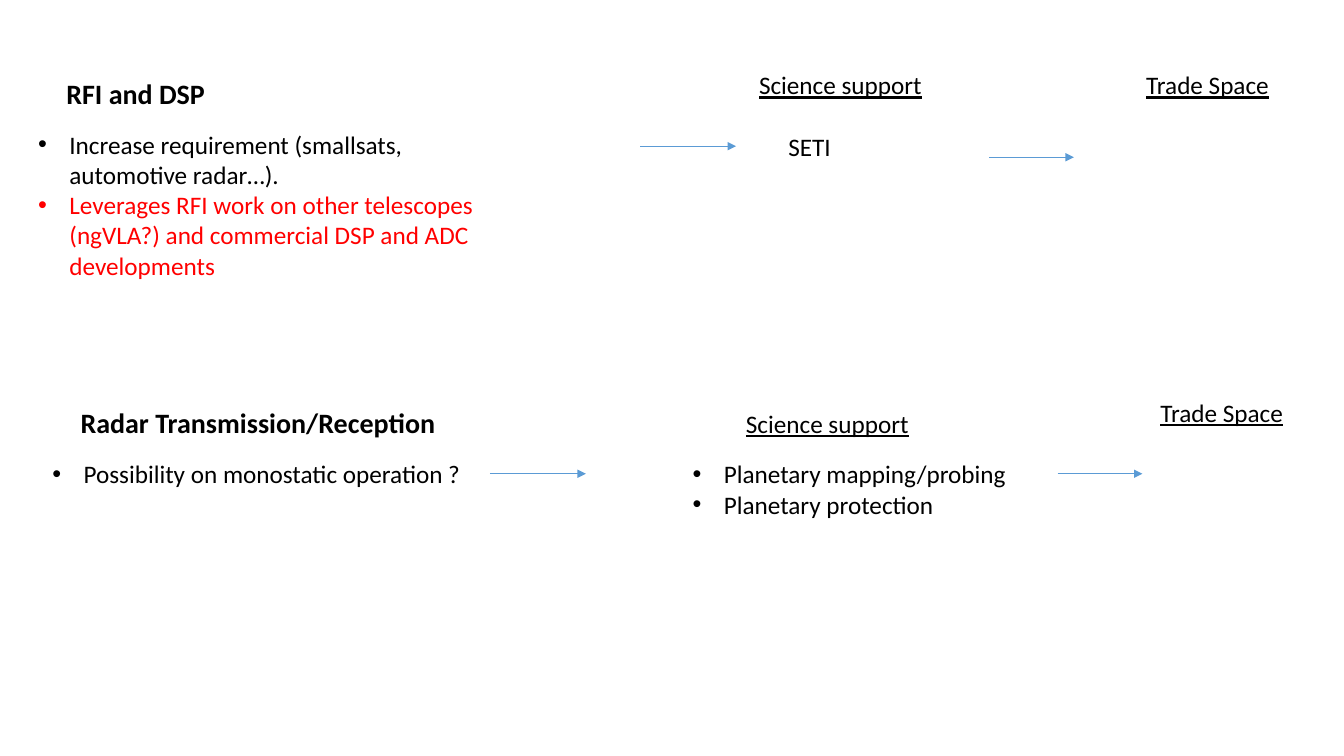
import pptx
import pptx.dml.color
import pptx.enum.shapes
import pptx.enum.text
import pptx.oxml.ns
import pptx.util
from lxml import etree
from pptx.util import Inches

FONT = "Calibri"
BLACK = "000000"
RED = "FF0000"
ARROW_BLUE = "5B9BD5"
BULLET_INDENT = Inches(0.31)


def colour(value):
    return pptx.dml.color.RGBColor.from_string(value)


def add_xml(parent, tag, **attributes):
    """Append a DrawingML element to its parent."""
    return etree.SubElement(parent, pptx.oxml.ns.qn(tag), **attributes)


def add_box(page, left, top, width, height, wrap):
    box = page.shapes.add_textbox(
        Inches(left), Inches(top), Inches(width), Inches(height))
    frame = box.text_frame
    frame.word_wrap = wrap
    frame.auto_size = pptx.enum.text.MSO_AUTO_SIZE.SHAPE_TO_FIT_TEXT
    return frame


def add_span(para, text, size=18, fill=BLACK, bold=None, underline=None):
    span = para.add_run()
    span.text = text
    span.font.name = FONT
    span.font.size = pptx.util.Pt(size)
    span.font.bold = bold
    span.font.underline = underline
    span.font.color.rgb = colour(fill)


def add_label(page, left, top, width, text, height=0.4, wrap=False, **style):
    """Add a single line of text, such as a heading."""
    frame = add_box(page, left, top, width, height, wrap)
    add_span(frame.paragraphs[0], text, **style)


def add_bullets(page, left, top, width, height, items, wrap=True):
    """Add a bulleted list of (text, colour) items."""
    frame = add_box(page, left, top, width, height, wrap)
    for index, (text, fill) in enumerate(items):
        para = frame.add_paragraph() if index else frame.paragraphs[0]
        properties = para._p.get_or_add_pPr()
        properties.set("marL", str(BULLET_INDENT))
        properties.set("indent", str(-BULLET_INDENT))
        add_xml(properties, "a:buFont", typeface="Arial")
        add_xml(properties, "a:buChar", char="•")
        add_span(para, text, fill=fill)


def add_arrow(page, left, top, length):
    """Add a thin horizontal arrow pointing right."""
    arrow = page.shapes.add_connector(
        pptx.enum.shapes.MSO_CONNECTOR.STRAIGHT,
        Inches(left), Inches(top), Inches(left + length), Inches(top))
    arrow.line.color.rgb = colour(ARROW_BLUE)
    arrow.line.width = pptx.util.Pt(0.5)
    add_xml(arrow.line._get_or_add_ln(), "a:tailEnd", type="triangle")
    add_xml(arrow._element.spPr, "a:effectLst")


def main():
    deck = pptx.Presentation()
    deck.slide_width = Inches(13.33)
    deck.slide_height = Inches(7.5)
    page = deck.slides.add_slide(deck.slide_layouts[6])

    # Topic headings
    add_label(page, 0.56, 0.71, 1.59, "RFI and DSP",
              height=0.44, size=20, bold=True)
    add_label(page, 0.7, 3.97, 3.75, "Radar Transmission/Reception",
              height=0.44, size=20, bold=True)

    # Column headings
    for left, top in ((7.43, 0.64), (7.3, 4)):
        add_label(page, left, top, 1.84, "Science support", underline=True)
    for left, top in ((11.27, 0.64), (11.41, 3.89)):
        add_label(page, left, top, 1.9, "Trade Space",
                  wrap=True, underline=True)

    # RFI and DSP content
    add_bullets(page, 0.28, 1.23, 4.92, 1.62, [
        ("Increase requirement (smallsats, automotive radar…).", BLACK),
        ("Leverages RFI work on other telescopes (ngVLA?) and commercial "
         "DSP and ADC developments", RED),
    ])
    add_label(page, 7.72, 1.25, 0.63, "SETI")

    # Radar content
    add_bullets(page, 0.42, 4.5, 4.92, 0.4,
                [("Possibility on monostatic operation ?", BLACK)])
    add_bullets(page, 6.77, 4.5, 3.35, 0.71, [
        ("Planetary mapping/probing", BLACK),
        ("Planetary protection", BLACK),
    ], wrap=False)

    # Arrows to science support, then to trade space
    for left, top, length in ((6.35, 1.45, 0.95), (9.81, 1.56, 0.84),
                              (4.86, 4.7, 0.95), (10.49, 4.7, 0.84)):
        add_arrow(page, left, top, length)

    deck.save("out.pptx")


if __name__ == "__main__":
    main()
